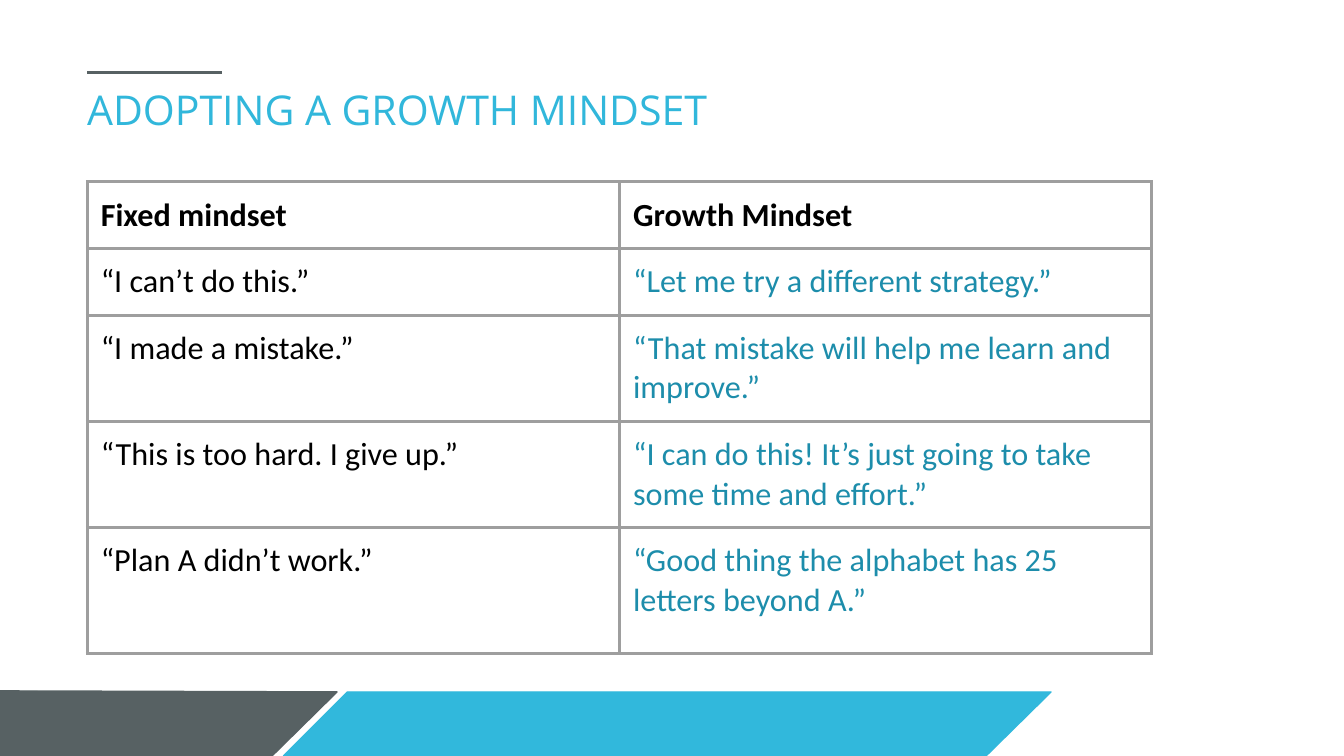
from lxml.etree import SubElement
from pptx import Presentation
from pptx.dml.color import RGBColor
from pptx.enum.text import MSO_ANCHOR, MSO_AUTO_SIZE, PP_ALIGN
from pptx.oxml.ns import qn
from pptx.util import Pt

PX = 9525
GREY, SKY, TEAL, BLACK, RULE = "576163", "31B8DC", "1D8DAB", "000000", "9E9E9E"
ROWS = [
    ("Fixed mindset", "Growth Mindset", 60),
    ("“I can’t do this.”", "“Let me try a different strategy.”", 60),
    ("“I made a mistake.”", "“That mistake will help me learn and improve.”", 94),
    ("“This is too hard. I give up.”",
     "“I can do this! It’s just going to take some time and effort.”", 94),
    ("“Plan A didn’t work.”", "“Good thing the alphabet has 25 letters beyond A.”", 120),
]


def px(*nums):
    return [n * PX for n in nums]


def color(code):
    return RGBColor.from_string(code)


def add_run(para, text, face, size, code, bold=False):
    run = para.add_run()
    run.text = text
    font = run.font
    font.name, font.size, font.bold = face, Pt(size), bold
    font.color.rgb = color(code)


def add_band(slide, box, points, code):
    left, top = box
    spots = [(left + x, top + y) for x, y in points]
    pen = slide.shapes.build_freeform(*spots[0], scale=PX)
    pen.add_line_segments(spots[1:], close=True)
    band = pen.convert_to_shape()
    band.shadow.inherit = False
    band.fill.solid()
    band.fill.fore_color.rgb = color(code)
    band.line.color.rgb = color(code)
    band.line.width = Pt(1)


def add_foot(slide, box):
    add_band(slide, box, [(274, 62), (335, 1), (1005, 1), (940, 65), (274, 62)], SKY)
    add_band(slide, box, [(0, 64), (1, 0), (325, 1), (260, 65), (0, 64)], GREY)


def add_head(slide, box):
    left, top, width, height = box
    bar = slide.shapes.add_connector(1, *px(left, top, left + 128, top))
    bar.line.color.rgb = color(GREY)
    bar.line.width = Pt(2.25)
    SubElement(bar._element.spPr, qn("a:effectLst"))
    title = slide.shapes.title
    title.left, title.top, title.width, title.height = px(left, top + 11, width, height - 11)
    frame = title.text_frame
    frame.margin_left = frame.margin_top = frame.margin_right = frame.margin_bottom = 0
    frame.auto_size = MSO_AUTO_SIZE.NONE
    frame.vertical_anchor = MSO_ANCHOR.TOP
    frame.word_wrap = True
    para = frame.paragraphs[0]
    para.alignment = PP_ALIGN.LEFT
    add_run(para, "ADOPTING A GROWTH MINDSET", "Open Sans", 29.3, "31B7DB")


def add_edges(cell):
    props = cell._tc.get_or_add_tcPr()
    for spot, side in enumerate(("lnL", "lnR", "lnT", "lnB")):
        edge = props.makeelement(qn("a:" + side), {"w": str(Pt(2.25))})
        fill = SubElement(edge, qn("a:solidFill"))
        SubElement(fill, qn("a:srgbClr"), val=RULE)
        props.insert(spot, edge)


def add_grid(slide, box):
    left, top, width = box
    height = sum(row[2] for row in ROWS)
    grid = slide.shapes.add_table(len(ROWS), 2, *px(left, top, width, height)).table
    grid.first_row = grid.horz_banding = False
    for i, (fixed, growth, tall) in enumerate(ROWS):
        grid.rows[i].height = tall * PX
        for j, text in enumerate((fixed, growth)):
            cell = grid.cell(i, j)
            cell.margin_left = cell.margin_right = 13 * PX
            cell.margin_top = cell.margin_bottom = 13 * PX
            cell.fill.background()
            add_edges(cell)
            code = TEAL if i and j else BLACK
            add_run(cell.text_frame.paragraphs[0], text, "Calibri", 23, code, i == 0)


def main():
    deck = Presentation()
    deck.slide_width, deck.slide_height = px(1280, 720)
    slide = deck.slides.add_slide(deck.slide_layouts[5])
    add_foot(slide, (-4, 658))
    add_head(slide, (83, 69, 1114, 65))
    add_grid(slide, (83, 173, 1014))
    deck.save("out.pptx")


if __name__ == "__main__":
    main()
